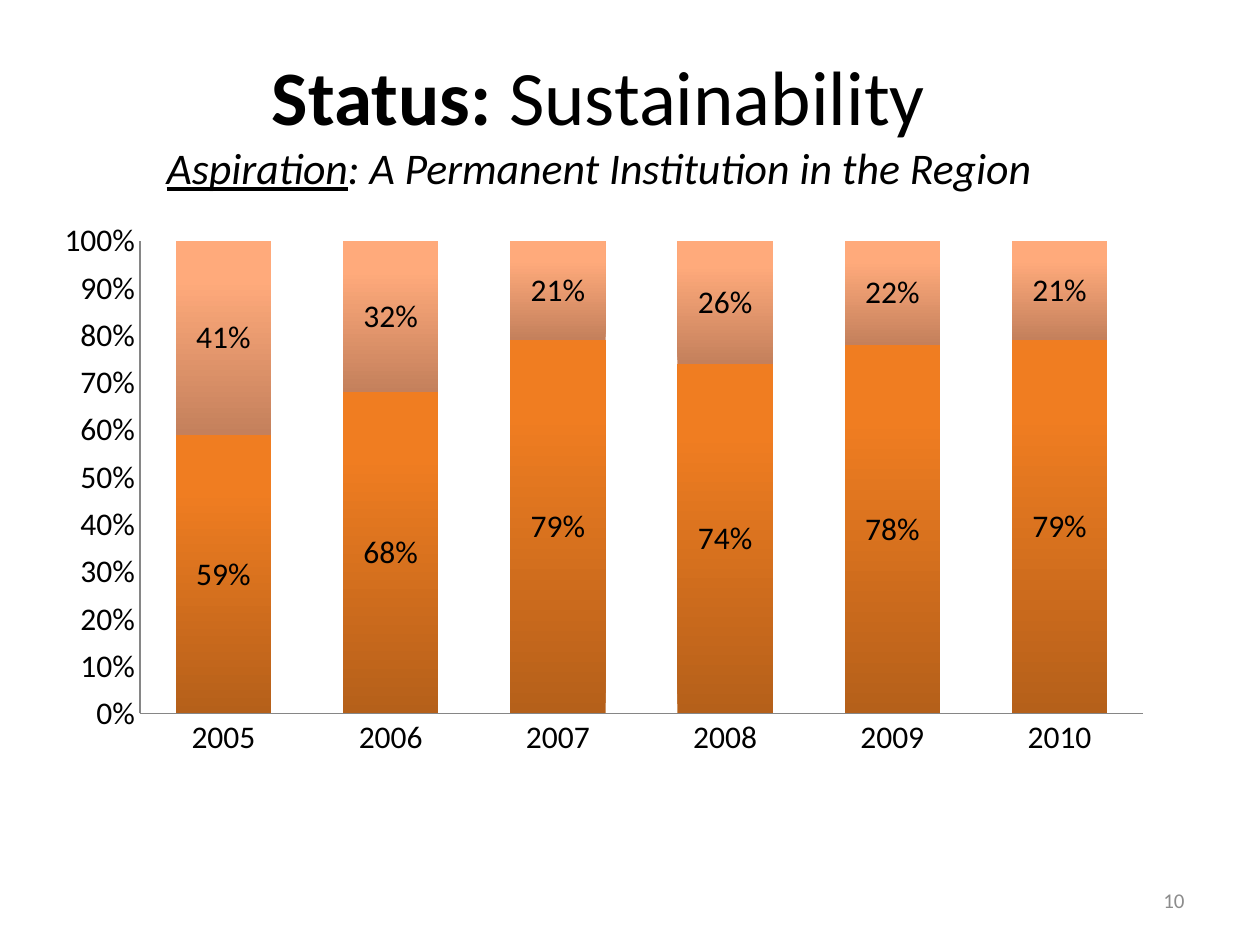
from lxml import etree
from pptx import Presentation
from pptx import util as u
from pptx.chart import data as chart_data
from pptx.dml import color
from pptx.enum import chart as ch
from pptx.enum import text
from pptx.oxml import ns

FONT = "Calibri"
YEARS = ["2005", "2006", "2007", "2008", "2009", "2010"]
LOWER_SHARES = [0.59, 0.68, 0.79, 0.74, 0.78, 0.79]
UPPER_SHARES = [0.41, 0.32, 0.21, 0.26, 0.22, 0.21]
STACK = [(LOWER_SHARES, "B5601A", "F07D21"),
         (UPPER_SHARES, "C4805C", "FFAA7B")]


def rgb(value):
    """Return the colour for a hex string."""
    return color.RGBColor.from_string(value)


def format_font(font, size, fill="000000", bold=False, italic=False, underline=False):
    """Set family, size, colour and style of a font."""
    font.name, font.size = FONT, u.Pt(size)
    font.bold, font.italic, font.underline = bold, italic, underline
    font.color.rgb = rgb(fill)


def place(shape, box):
    """Move and size a shape to a box of centimetres."""
    shape.left, shape.top, shape.width, shape.height = map(u.Cm, box)


def fill_heading(title, box):
    """Write the two-line heading into the title placeholder."""
    place(title, box)
    frame = title.text_frame
    frame.auto_size = text.MSO_AUTO_SIZE.NONE
    frame.vertical_anchor = text.MSO_ANCHOR.MIDDLE
    lines = [
        [("Status: ", dict(size=44, bold=True)), ("Sustainability", dict(size=44))],
        [("Aspiration", dict(size=25, italic=True, underline=True)),
         (": A Permanent Institution in the Region", dict(size=25, italic=True))],
    ]
    for index, line in enumerate(lines):
        para = frame.add_paragraph() if index else frame.paragraphs[0]
        para.alignment = text.PP_ALIGN.CENTER
        para.space_before = u.Pt(0)
        for words, style in line:
            span = para.add_run()
            span.text = words
            format_font(span.font, **style)


def set_plot_layout(chart, x, y, w, h):
    """Fix the inner plot area as fractions of the chart."""
    area = chart.element.find(".//" + ns.qn("c:plotArea"))
    for old in area.findall(ns.qn("c:layout")):
        area.remove(old)
    layout = etree.Element(ns.qn("c:layout"))
    manual = etree.SubElement(layout, ns.qn("c:manualLayout"))
    settings = [("layoutTarget", "inner"), ("xMode", "edge"), ("yMode", "edge"),
                ("x", x), ("y", y), ("w", w), ("h", h)]
    for tag, value in settings:
        etree.SubElement(manual, ns.qn("c:" + tag)).set("val", str(value))
    area.insert(0, layout)


def shade(fill, bottom, top):
    """Fill with a gradient that reaches its top tone at four fifths."""
    fill.gradient()
    fill.gradient_angle = 90
    for stop, tone, position in zip(fill.gradient_stops, (bottom, top), (0, 0.8)):
        stop.color.rgb, stop.position = rgb(tone), position


def add_share_chart(page, box):
    """Add the stacked columns of yearly shares."""
    data = chart_data.CategoryChartData(number_format="0%")
    data.categories = YEARS
    for values, _, _ in STACK:
        data.add_series("", values)
    chart = page.shapes.add_chart(
        ch.XL_CHART_TYPE.COLUMN_STACKED, *map(u.Cm, box), data).chart
    format_font(chart.font, 18)
    chart.has_legend = chart.has_title = False
    set_plot_layout(chart, 0.087, 0.05, 0.893, 0.763)

    for axis in (chart.category_axis, chart.value_axis):
        axis.has_major_gridlines = False
        axis.major_tick_mark = axis.minor_tick_mark = ch.XL_TICK_MARK.NONE
        axis.format.line.color.rgb = rgb("868686")
        axis.format.line.width = u.Pt(0.75)
    scale = chart.value_axis
    scale.minimum_scale, scale.maximum_scale, scale.major_unit = 0, 1, 0.1
    scale.tick_labels.number_format = "0%"
    scale.tick_labels.number_format_is_linked = False

    plot = chart.plots[0]
    plot.gap_width, plot.overlap = 75, 100
    plot.vary_by_categories = False
    for series, (_, bottom, top) in zip(plot.series, STACK):
        shade(series.format.fill, bottom, top)
        series.format.line.fill.background()
        labels = series.data_labels
        labels.show_value = True
        labels.number_format, labels.number_format_is_linked = "0%", False
        labels.position = ch.XL_LABEL_POSITION.CENTER
        format_font(labels.font, 18)


def add_page_number(page, box, number):
    """Add the page number at the right of its box."""
    frame = page.shapes.add_textbox(*map(u.Cm, box)).text_frame
    frame.word_wrap = True
    frame.vertical_anchor = text.MSO_ANCHOR.MIDDLE
    para = frame.paragraphs[0]
    para.text = number
    para.alignment = text.PP_ALIGN.RIGHT
    format_font(para.runs[0].font, 12, "8C8C8C")


def main():
    """Build the slide and save the deck."""
    deck = Presentation()
    deck.slide_width, deck.slide_height = u.Cm(25.4), u.Cm(19.05)
    page = deck.slides.add_slide(deck.slide_layouts[5])
    fill_heading(page.shapes.title, (0.64, 0.85, 22.86, 3.18))
    add_share_chart(page, (0.85, 4.23, 22.65, 12.49))
    add_page_number(page, (18.2, 17.65, 5.93, 1.01), "10")
    deck.save("out.pptx")


if __name__ == "__main__":
    main()
